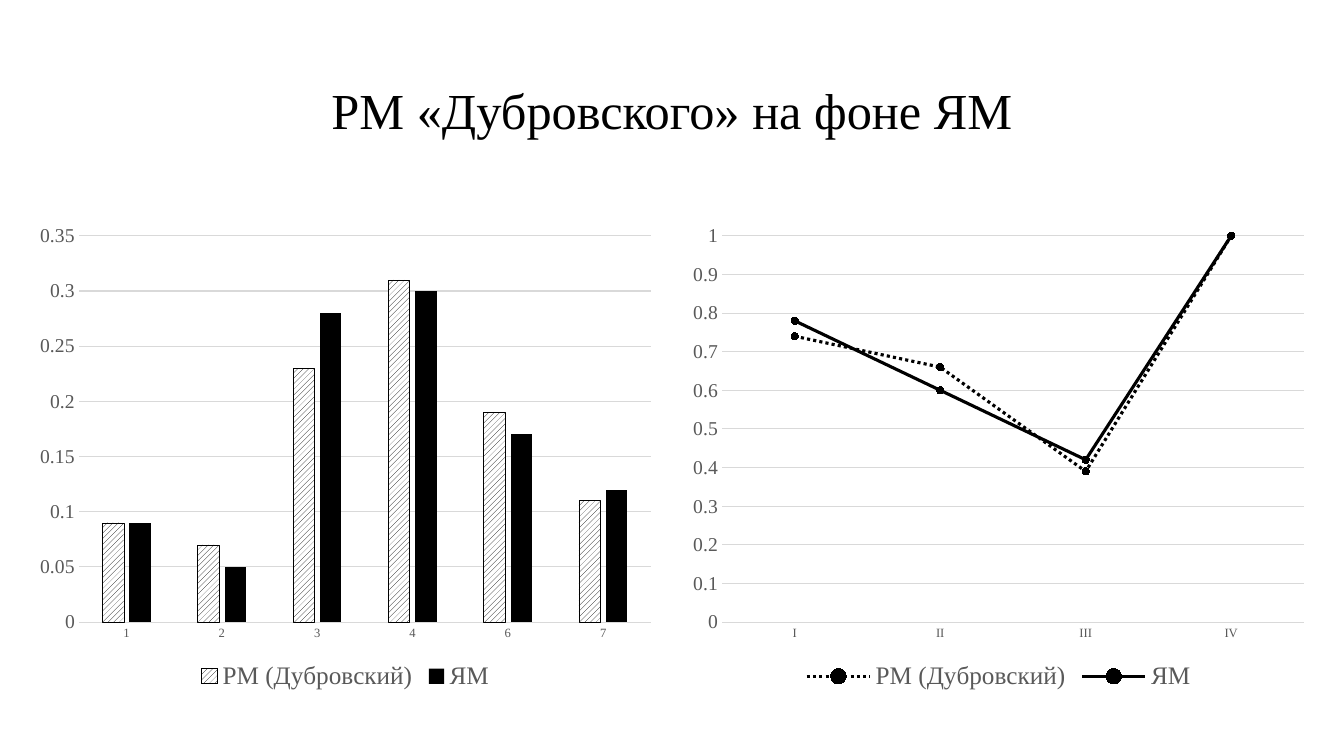
from pptx import Presentation
from pptx.chart.data import CategoryChartData as Data
from pptx.dml.color import RGBColor as RGB
from pptx.enum.chart import XL_CHART_TYPE as Kind, XL_LEGEND_POSITION as Spot
from pptx.enum.chart import XL_MARKER_STYLE as Mark, XL_TICK_MARK as Tick
from pptx.enum.dml import MSO_LINE as Dash, MSO_PATTERN as Hatch
from pptx.enum.text import MSO_ANCHOR as Anchor, PP_ALIGN as Align
from pptx.util import Emu, Pt
from dataclasses import dataclass


@dataclass(frozen=True)
class Theme:
    face: str = "Times New Roman"
    ink: RGB = RGB(0, 0, 0)
    gray: RGB = RGB(0x59, 0x59, 0x59)
    grid: RGB = RGB(0xD9, 0xD9, 0xD9)
    paper: RGB = RGB(255, 255, 255)
    title: int = 36
    base: int = 10
    cat: int = 9
    val: int = 14
    key: int = 18


THEME = Theme()
NAMES = ("РМ (Дубровский)", "ЯМ")


def px(n):
    return Emu(n * 9525)


def apply(item, **vals):
    for name, val in vals.items():
        setattr(item, name, val)


def style(font, size, color):
    apply(font, name=THEME.face, size=Pt(size))
    font.color.rgb = color


def stroke(line, color, width):
    line.color.rgb = color
    line.width = Pt(width)


def add_title(slide, text, box):
    frame = slide.shapes.add_textbox(*map(px, box)).text_frame
    apply(frame, word_wrap=True, vertical_anchor=Anchor.MIDDLE)
    para = frame.paragraphs[0]
    apply(para, alignment=Align.CENTER, line_spacing=0.9)
    run = para.add_run()
    run.text = text
    style(run.font, THEME.title, THEME.ink)


def add_chart(slide, kind, box, cats, rows, top, step):
    data = Data()
    data.categories = cats
    for name, vals in zip(NAMES, rows):
        data.add_series(name, vals)
    chart = slide.shapes.add_chart(kind, *map(px, box), data).chart
    chart.has_title = False
    style(chart.font, THEME.base, THEME.ink)

    # Legend
    chart.has_legend = True
    apply(chart.legend, position=Spot.BOTTOM, include_in_layout=False)
    style(chart.legend.font, THEME.key, THEME.gray)

    # Axes and grid
    cat, val = chart.category_axis, chart.value_axis
    for axis, size in ((cat, THEME.cat), (val, THEME.val)):
        apply(axis, major_tick_mark=Tick.NONE, minor_tick_mark=Tick.NONE)
        style(axis.tick_labels.font, size, THEME.gray)
    apply(val, minimum_scale=0, maximum_scale=top, major_unit=step,
          has_major_gridlines=True)
    apply(val.tick_labels, number_format="General",
          number_format_is_linked=False)
    stroke(cat.format.line, THEME.grid, 0.75)
    stroke(val.major_gridlines.format.line, THEME.grid, 0.75)
    val.format.line.fill.background()

    plot = chart.plots[0]
    plot.vary_by_categories = False
    return plot


def paint_bars(plot):
    apply(plot, gap_width=219, overlap=-27)
    first, last = plot.series
    fill = first.format.fill
    fill.patterned()
    fill.pattern = Hatch.WIDE_UPWARD_DIAGONAL
    fill.fore_color.rgb = THEME.ink
    fill.back_color.rgb = THEME.paper
    stroke(first.format.line, THEME.ink, 0.25)
    last.format.fill.solid()
    last.format.fill.fore_color.rgb = THEME.ink


def paint_lines(plot):
    for row in plot.series:
        row.smooth = False
        stroke(row.format.line, THEME.ink, 2.25)
        apply(row.marker, style=Mark.CIRCLE, size=5)
        look = row.marker.format
        look.fill.solid()
        look.fill.fore_color.rgb = THEME.ink
        stroke(look.line, THEME.ink, 0.75)
    plot.series[0].format.line.dash_style = Dash.ROUND_DOT


def main():
    deck = Presentation()
    apply(deck, slide_width=px(1280), slide_height=px(720))
    slide = deck.slides.add_slide(deck.slide_layouts[6])

    add_title(slide, "РМ «Дубровского» на фоне ЯМ", (88, 38, 1104, 139))

    # Right: line chart
    lines = add_chart(
        slide, Kind.LINE_MARKERS, (648, 205, 606, 457),
        ("I", "II", "III", "IV"),
        ((0.74, 0.66, 0.39, 1), (0.78, 0.6, 0.42, 1)), 1, 0.1)
    paint_lines(lines)

    # Left: column chart
    bars = add_chart(
        slide, Kind.COLUMN_CLUSTERED, (26, 205, 606, 457),
        ("1", "2", "3", "4", "6", "7"),
        ((0.09, 0.07, 0.23, 0.31, 0.19, 0.11),
         (0.09, 0.05, 0.28, 0.3, 0.17, 0.12)), 0.35, 0.05)
    paint_bars(bars)

    deck.save("out.pptx")


if __name__ == "__main__":
    main()
